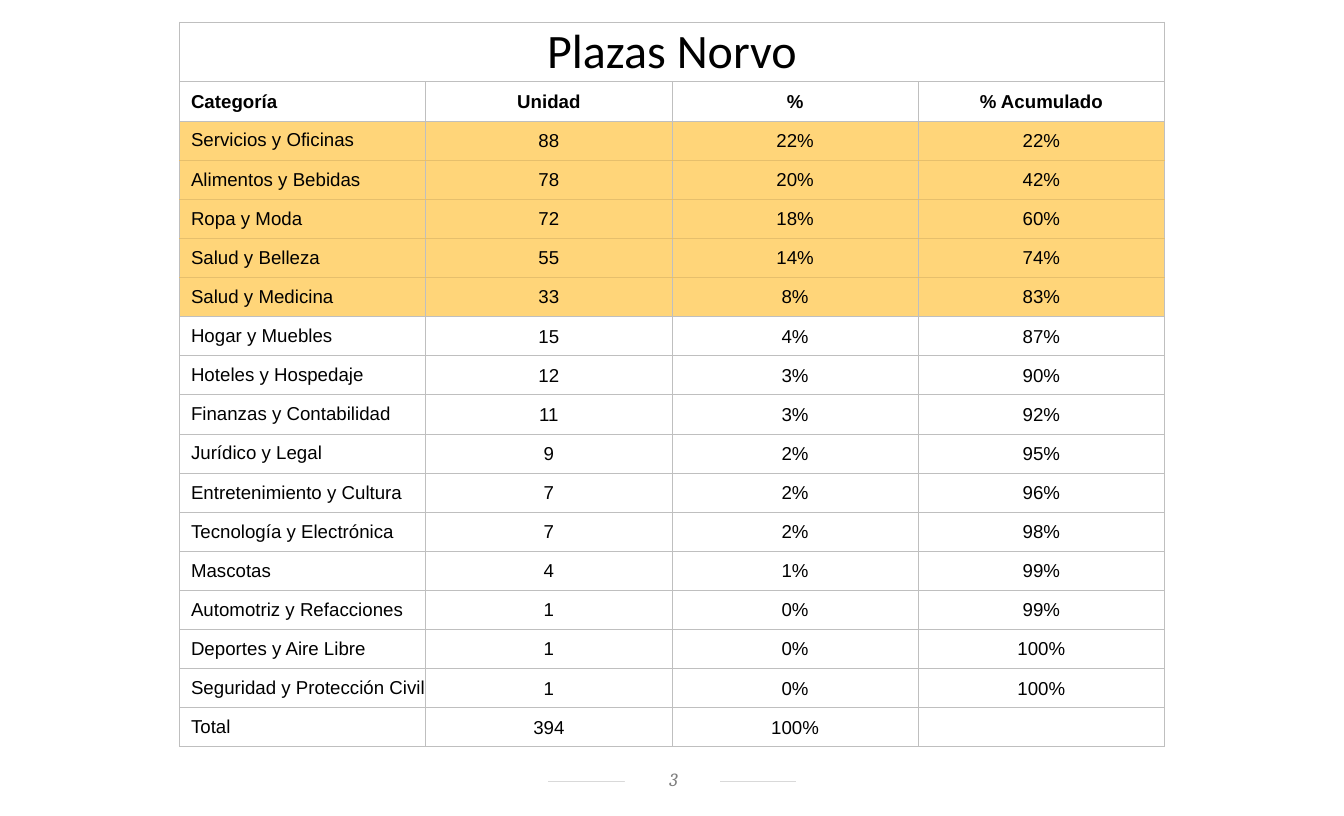
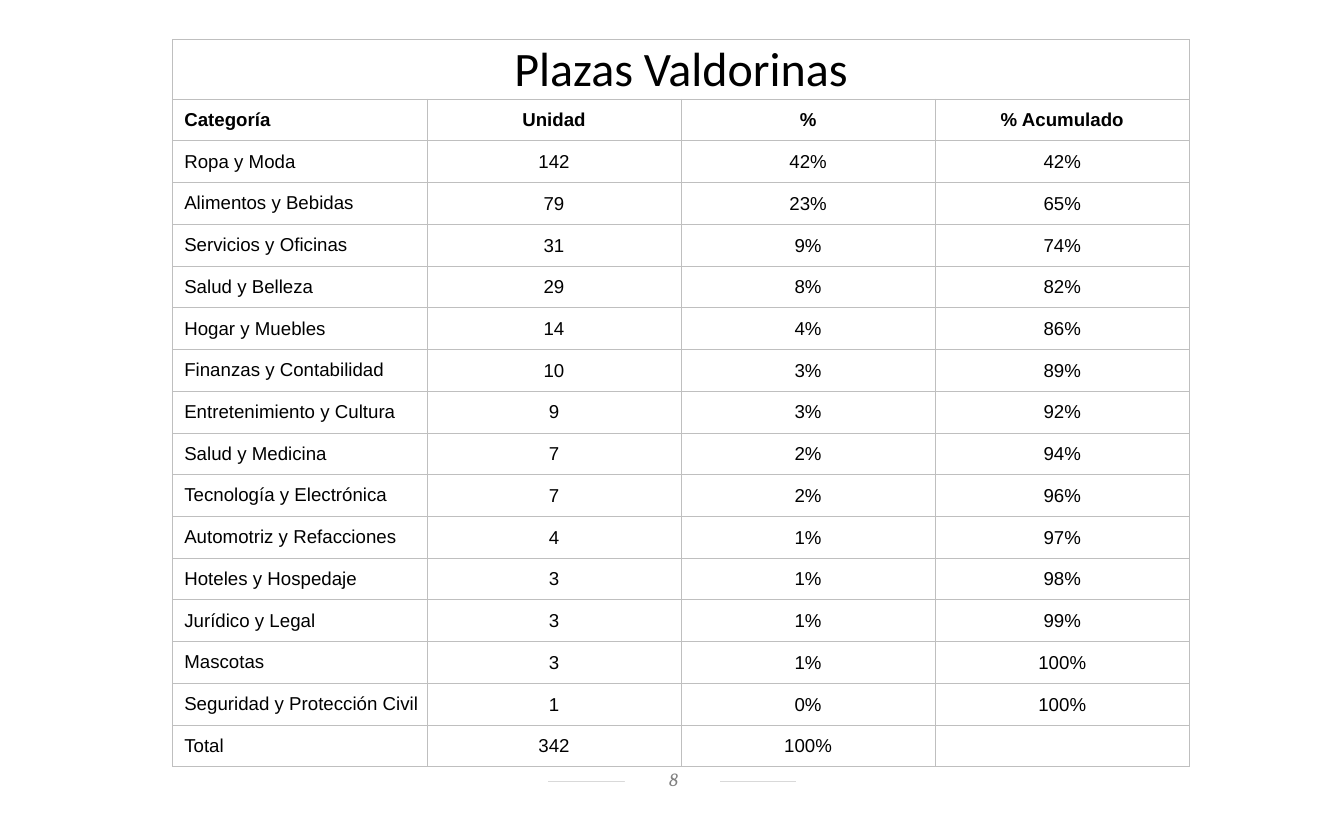
from lxml import etree
from pptx import Presentation
from pptx.dml.color import RGBColor
from pptx.enum.shapes import MSO_CONNECTOR, MSO_SHAPE
from pptx.enum.text import MSO_ANCHOR, PP_ALIGN
from pptx.oxml.ns import qn
from pptx.util import Inches, Pt

LEFT, CENTER = PP_ALIGN.LEFT, PP_ALIGN.CENTER
MIDDLE = MSO_ANCHOR.MIDDLE
STRAIGHT = MSO_CONNECTOR.STRAIGHT
RECT = MSO_SHAPE.RECTANGLE

# Shared look
WIDE, HIGH = 14, 8.5
BLACK, WHITE, GREY = "000000", "FFFFFF", "808080"
RULE, GRID = "D9D9D9", "BFBFBF"
AMBER, HONEY = "FFD579", "E6BF6C"
HEAD = ("Categoría", "Unidad", "%", "% Acumulado")
TITLE_ROW = 0.61

# Units per category, largest first
NORVO = {
    "Servicios y Oficinas": 88,
    "Alimentos y Bebidas": 78,
    "Ropa y Moda": 72,
    "Salud y Belleza": 55,
    "Salud y Medicina": 33,
    "Hogar y Muebles": 15,
    "Hoteles y Hospedaje": 12,
    "Finanzas y Contabilidad": 11,
    "Jurídico y Legal": 9,
    "Entretenimiento y Cultura": 7,
    "Tecnología y Electrónica": 7,
    "Mascotas": 4,
    "Automotriz y Refacciones": 1,
    "Deportes y Aire Libre": 1,
    "Seguridad y Protección Civil": 1,
}
VALDOR = {
    "Ropa y Moda": 142,
    "Alimentos y Bebidas": 79,
    "Servicios y Oficinas": 31,
    "Salud y Belleza": 29,
    "Hogar y Muebles": 14,
    "Finanzas y Contabilidad": 10,
    "Entretenimiento y Cultura": 9,
    "Salud y Medicina": 7,
    "Tecnología y Electrónica": 7,
    "Automotriz y Refacciones": 4,
    "Hoteles y Hospedaje": 3,
    "Jurídico y Legal": 3,
    "Mascotas": 3,
    "Seguridad y Protección Civil": 1,
}


def rgb(code):
    return RGBColor.from_string(code)


def inset(obj, left, top, right, low):
    obj.margin_left, obj.margin_top = Inches(left), Inches(top)
    obj.margin_right, obj.margin_bottom = Inches(right), Inches(low)


def write(frame, text, size, face, color=BLACK, align=CENTER,
          bold=False, slant=False):
    frame.text = text
    para = frame.paragraphs[0]
    para.alignment = align
    for run in para.runs:
        font = run.font
        font.size, font.name = Pt(size), face
        font.bold, font.italic = bold, slant
        font.color.rgb = rgb(color)


def edge(cell, side, color):
    props = cell._tc.get_or_add_tcPr()
    line = etree.SubElement(props, qn("a:ln" + side), w=str(Pt(0.5)))
    fill = etree.SubElement(line, qn("a:solidFill"))
    etree.SubElement(fill, qn("a:srgbClr"), val=color)


def footer(slide, page):
    # Centred rule, with the page number set in a gap
    mid, half, y = WIDE / 2, 1.29, 8.14
    rule = slide.shapes.add_connector(
        STRAIGHT, Inches(mid - half), Inches(y), Inches(mid + half), Inches(y))
    rule.line.color.rgb = rgb(RULE)
    rule.line.width = Pt(0.5)
    etree.SubElement(rule._element.spPr, qn("a:effectLst"))

    box = slide.shapes.add_shape(
        RECT, Inches(6.51), Inches(7.98), Inches(0.99), Inches(0.29))
    box.shadow.inherit = False
    box.fill.solid()
    box.fill.fore_color.rgb = rgb(WHITE)
    box.line.fill.background()
    frame = box.text_frame
    frame.vertical_anchor = MIDDLE
    inset(frame, 0.12, 0.02, 0.1, 0.05)
    write(frame, str(page), 14, "Cambria", GREY, slant=True)


def tally(title, units):
    # Shares and running shares follow from the units
    total, sofar = sum(units.values()), 0
    rows = [(title, "", "", ""), HEAD]
    for name, count in units.items():
        sofar += count
        rows.append((name, str(count), f"{count / total:.0%}",
                     f"{sofar / total:.0%}"))
    rows.append(("Total", str(total), "100%", ""))
    return rows


def grid(slide, rows, left, top, width, height, marked):
    table = slide.shapes.add_table(
        len(rows), len(HEAD), Inches(left), Inches(top),
        Inches(width), Inches(height)).table
    table.first_row = table.horz_banding = False
    for col in table.columns:
        col.width = Inches(width / len(HEAD))
    step = (height - TITLE_ROW) / (len(rows) - 1)
    for r, row in enumerate(table.rows):
        row.height = Inches(step if r else TITLE_ROW)
    table.cell(0, 0).merge(table.cell(0, len(HEAD) - 1))

    lit = range(2, 2 + marked)
    for r, texts in enumerate(rows):
        for c, text in enumerate(texts):
            cell = table.cell(r, c)
            name = c == 0 and r > 0
            cell.vertical_anchor = MIDDLE
            # Names use the full column, so the longest stays on one line
            if name:
                inset(cell, 0.12, 0.01, 0, 0.01 if r > 1 else 0)
            else:
                inset(cell, 0.01, 0.01, 0.01, 0)
            if r == 0:
                write(cell.text_frame, text, 36, "Calibri")
            else:
                write(cell.text_frame, text, 14, "Arial",
                      align=LEFT if name else CENTER, bold=r == 1)
            # Softer lines between highlighted rows
            for side, near in (("L", None), ("R", None),
                               ("T", r - 1), ("B", r + 1)):
                inner = r in lit and near in lit
                edge(cell, side, HONEY if inner else GRID)
            if r in lit:
                cell.fill.solid()
                cell.fill.fore_color.rgb = rgb(AMBER)
            else:
                cell.fill.background()


def main():
    deck = Presentation()
    deck.slide_width, deck.slide_height = Inches(WIDE), Inches(HIGH)
    blank = deck.slide_layouts[6]
    pages = (
        (3, "Plazas Norvo", NORVO, (1.87, 0.23, 10.26, 7.54), 5),
        (8, "Plazas Valdorinas", VALDOR, (1.8, 0.41, 10.59, 7.57), 0),
    )
    for page, title, units, place, marked in pages:
        slide = deck.slides.add_slide(blank)
        footer(slide, page)
        grid(slide, tally(title, units), *place, marked)
    deck.save("out.pptx")


if __name__ == "__main__":
    main()
